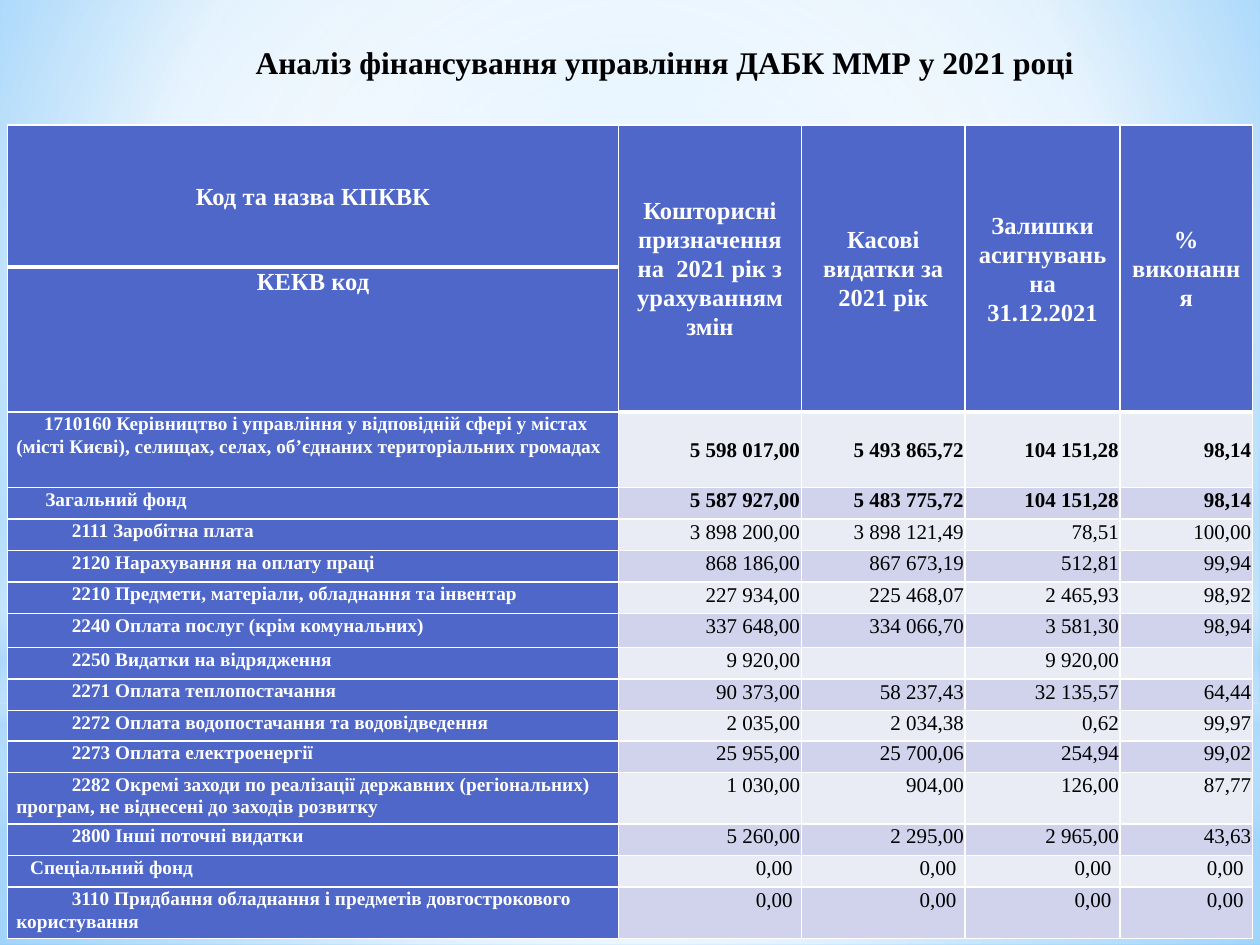
from typing import NamedTuple

from lxml.etree import SubElement
from pptx import Presentation
from pptx.dml.color import RGBColor
from pptx.enum.shapes import MSO_SHAPE
from pptx.enum.text import MSO_ANCHOR, MSO_AUTO_SIZE, PP_ALIGN
from pptx.oxml import parse_xml
from pptx.oxml.ns import nsdecls, qn
from pptx.util import Inches, Pt

WIDE, HIGH = 10, 7.5
FONT = "Times New Roman"
HUES = {"white": "FFFFFF", "black": "000000", "head": "4E67C8", "light": "E9EBF5",
        "dark": "D0D3EB", "haze": "B4DCFA", "sky": "9ED5FF", "rim": "5BB9FF"}


class Stop(NamedTuple):
    pos: int
    hue: str
    alpha: int = 100


class Layer(NamedTuple):
    kind: MSO_SHAPE
    top: float  # share of slide height
    tall: float
    stops: list
    focus: tuple | None = (50, 50, 50, 50)  # None means a vertical linear blend


class Style(NamedTuple):
    size: int
    hue: str
    bold: bool
    align: PP_ALIGN
    anchor: MSO_ANCHOR = MSO_ANCHOR.TOP
    space: float | None = 1.07
    side: float = 0.07
    over: float = 0
    indent: float = 0


class Row(NamedTuple):
    tall: float
    label: str
    values: list
    indent: float = 0.44
    bold: bool = False


SKY = [Stop(0, "sky"), Stop(60, "white"), Stop(100, "rim")]
LAYERS = [
    Layer(MSO_SHAPE.RECTANGLE, 0.744, 0.256,
          [Stop(0, "white", 91), Stop(37, "white", 76), Stop(100, "haze", 79)]),
    Layer(MSO_SHAPE.RECTANGLE, 0, 0.744,
          [Stop(0, "white", 89), Stop(48, "white", 62), Stop(100, "haze", 79)]),
    Layer(MSO_SHAPE.RECTANGLE, 0.55, 0.333,
          [Stop(0, "white", 0), Stop(29, "white", 30), Stop(45, "haze", 40),
           Stop(55, "white", 26), Stop(65, "haze", 60), Stop(100, "white", 0)], None),
    Layer(MSO_SHAPE.OVAL, 0.233, 0.744, [Stop(0, "white"), Stop(56, "white", 0)]),
]

COLS = [4.85, 1.45, 1.3, 1.23, 1.05]
HEADS = ["Код та назва КПКВК", "Кошторисні призначення на  2021 рік з урахуванням змін",
         "Касові видатки за 2021 рік", "Залишки асигнувань на 31.12.2021", "% виконання"]
HEAD_ROWS = [1.13, 1.15]
ZERO = ["0,00"] * 4
ROWS = [
    Row(0.6, "1710160 Керівництво і управління у відповідній сфері у містах (місті Києві), "
        "селищах, селах, об’єднаних територіальних громадах",
        ["5 598 017,00", "5 493 865,72", "104 151,28", "98,14"], 0.22, True),
    Row(0.25, "Загальний фонд",
        ["5 587 927,00", "5 483 775,72", "104 151,28", "98,14"], 0.23, True),
    Row(0.25, "2111 Заробітна плата", ["3 898 200,00", "3 898 121,49", "78,51", "100,00"]),
    Row(0.25, "2120 Нарахування на оплату праці",
        ["868 186,00", "867 673,19", "512,81", "99,94"]),
    Row(0.25, "2210 Предмети, матеріали, обладнання та інвентар",
        ["227 934,00", "225 468,07", "2 465,93", "98,92"]),
    Row(0.27, "2240 Оплата послуг (крім комунальних)",
        ["337 648,00", "334 066,70", "3 581,30", "98,94"]),
    Row(0.25, "2250 Видатки на відрядження", ["9 920,00", "", "9 920,00", ""]),
    Row(0.25, "2271 Оплата теплопостачання",
        ["90 373,00", "58 237,43", "32 135,57", "64,44"]),
    Row(0.24, "2272 Оплата водопостачання та водовідведення",
        ["2 035,00", "2 034,38", "0,62", "99,97"]),
    Row(0.25, "2273 Оплата електроенергії", ["25 955,00", "25 700,06", "254,94", "99,02"]),
    Row(0.41, "2282 Окремі заходи по реалізації державних (регіональних) програм, "
        "не віднесені до заходів розвитку", ["1 030,00", "904,00", "126,00", "87,77"]),
    Row(0.25, "2800 Інші поточні видатки", ["5 260,00", "2 295,00", "2 965,00", "43,63"]),
    Row(0.25, "Спеціальний фонд", ZERO, 0.11),
    Row(0.41, "3110 Придбання обладнання і предметів довгострокового користування", ZERO),
]


def rgb(hue: str) -> RGBColor:
    return RGBColor.from_string(HUES[hue])


def apply(item, values: dict) -> None:
    for name, value in values.items():
        setattr(item, name, value)


def blend(fill, root, stops: list, focus: tuple | None) -> None:
    """Fill with a gradient that may be radial and partly transparent."""
    fill.gradient()
    grad = next(root.iter(qn("a:gradFill")))
    for child in list(grad):
        grad.remove(child)
    chain = SubElement(grad, qn("a:gsLst"))
    for stop in stops:
        mark = SubElement(chain, qn("a:gs"), pos=str(stop.pos * 1000))
        tint = SubElement(mark, qn("a:srgbClr"), val=HUES[stop.hue])
        if stop.alpha < 100:
            SubElement(tint, qn("a:alpha"), val=str(stop.alpha * 1000))
    if focus:
        ring = SubElement(grad, qn("a:path"), {"path": "circle"})
        SubElement(ring, qn("a:fillToRect"),
                   {side: str(part * 1000) for side, part in zip("ltrb", focus)})
    else:
        SubElement(grad, qn("a:lin"), ang=str(90 * 60000), scaled="0")


def add_layer(slide, layer: Layer) -> None:
    shape = slide.shapes.add_shape(layer.kind, 0, Inches(layer.top * HIGH),
                                   Inches(WIDE), Inches(layer.tall * HIGH))
    shape.shadow.inherit = False
    shape.line.fill.background()
    blend(shape.fill, shape.element, layer.stops, layer.focus)


def write(para, text: str, size: int, hue: str, bold: bool) -> None:
    if not text:
        SubElement(para._p, qn("a:endParaRPr"), sz=str(size * 100))
        return
    run = para.add_run()
    run.text = text
    apply(run.font, {"name": FONT, "size": Pt(size), "bold": bold})
    run.font.color.rgb = rgb(hue)


def edge(cell, base: int) -> None:
    """White borders; base is the width of the bottom one in points."""
    props = cell._tc.get_or_add_tcPr()
    for spot, (side, width) in enumerate(zip("LRTB", (1, 1, 1, base))):
        props.insert(spot, parse_xml(
            f'<a:ln{side} {nsdecls("a")} w="{Pt(width)}"><a:solidFill>'
            f'<a:srgbClr val="{HUES["white"]}"/></a:solidFill></a:ln{side}>'))


def fill_cell(cell, text: str, back: str, style: Style, base: int = 1) -> None:
    apply(cell, {"margin_left": Inches(style.side), "margin_right": Inches(style.side),
                 "margin_top": Inches(style.over), "margin_bottom": 0,
                 "vertical_anchor": style.anchor})
    cell.fill.solid()
    cell.fill.fore_color.rgb = rgb(back)
    edge(cell, base)
    para = cell.text_frame.paragraphs[0]
    apply(para, {"alignment": style.align, "line_spacing": style.space})
    if style.indent:
        para._p.get_or_add_pPr().set("indent", str(Inches(style.indent)))
    write(para, text, style.size, style.hue, style.bold)


def add_grid(slide) -> None:
    talls = HEAD_ROWS + [row.tall for row in ROWS]
    grid = slide.shapes.add_table(len(talls), len(COLS), Inches(0.06), Inches(0.99),
                                  Inches(sum(COLS)), Inches(sum(talls))).table
    for col, width in zip(grid.columns, COLS):
        col.width = Inches(width)
    for line, tall in zip(grid.rows, talls):
        line.height = Inches(tall)

    # Two header rows, joined in all columns but the first
    head = Style(14, "white", True, PP_ALIGN.CENTER, MSO_ANCHOR.MIDDLE)
    for c, text in enumerate(HEADS):
        fill_cell(grid.cell(0, c), text, "head", head, 3)
        low = "" if c else "КЕКВ код"
        fill_cell(grid.cell(1, c), low, "head",
                  head._replace(anchor=MSO_ANCHOR.TOP), 3 if c else 1)
        if c:
            grid.cell(0, c).merge(grid.cell(1, c))

    # Banded body rows
    label = Style(11, "white", True, PP_ALIGN.LEFT)
    plain = Style(12, "black", False, PP_ALIGN.RIGHT)
    tight = plain._replace(space=None, side=0.01, over=0.01)
    for r, row in enumerate(ROWS):
        fill_cell(grid.cell(r + 2, 0), row.label, "head", label._replace(indent=row.indent))
        style = plain if row.values is ZERO else tight
        anchor = MSO_ANCHOR.TOP if r else MSO_ANCHOR.MIDDLE
        for c, text in enumerate(row.values, 1):
            fill_cell(grid.cell(r + 2, c), text, ("light", "dark")[r % 2],
                      style._replace(bold=row.bold, anchor=anchor))


def add_title(slide) -> None:
    box = slide.shapes.add_textbox(Inches(1.93), Inches(0.29), Inches(6.85), Inches(0.4))
    apply(box.text_frame, {"word_wrap": True, "auto_size": MSO_AUTO_SIZE.SHAPE_TO_FIT_TEXT})
    write(box.text_frame.paragraphs[0],
          "Аналіз фінансування управління ДАБК ММР у 2021 році", 18, "black", True)


def main() -> None:
    deck = Presentation()
    apply(deck, {"slide_width": Inches(WIDE), "slide_height": Inches(HIGH)})
    slide = deck.slides.add_slide(deck.slide_layouts[6])
    blend(slide.background.fill, slide.element, SKY, (20, 10, 20, 60))
    for layer in LAYERS:
        add_layer(slide, layer)
    add_grid(slide)
    add_title(slide)
    deck.save("out.pptx")


if __name__ == "__main__":
    main()
